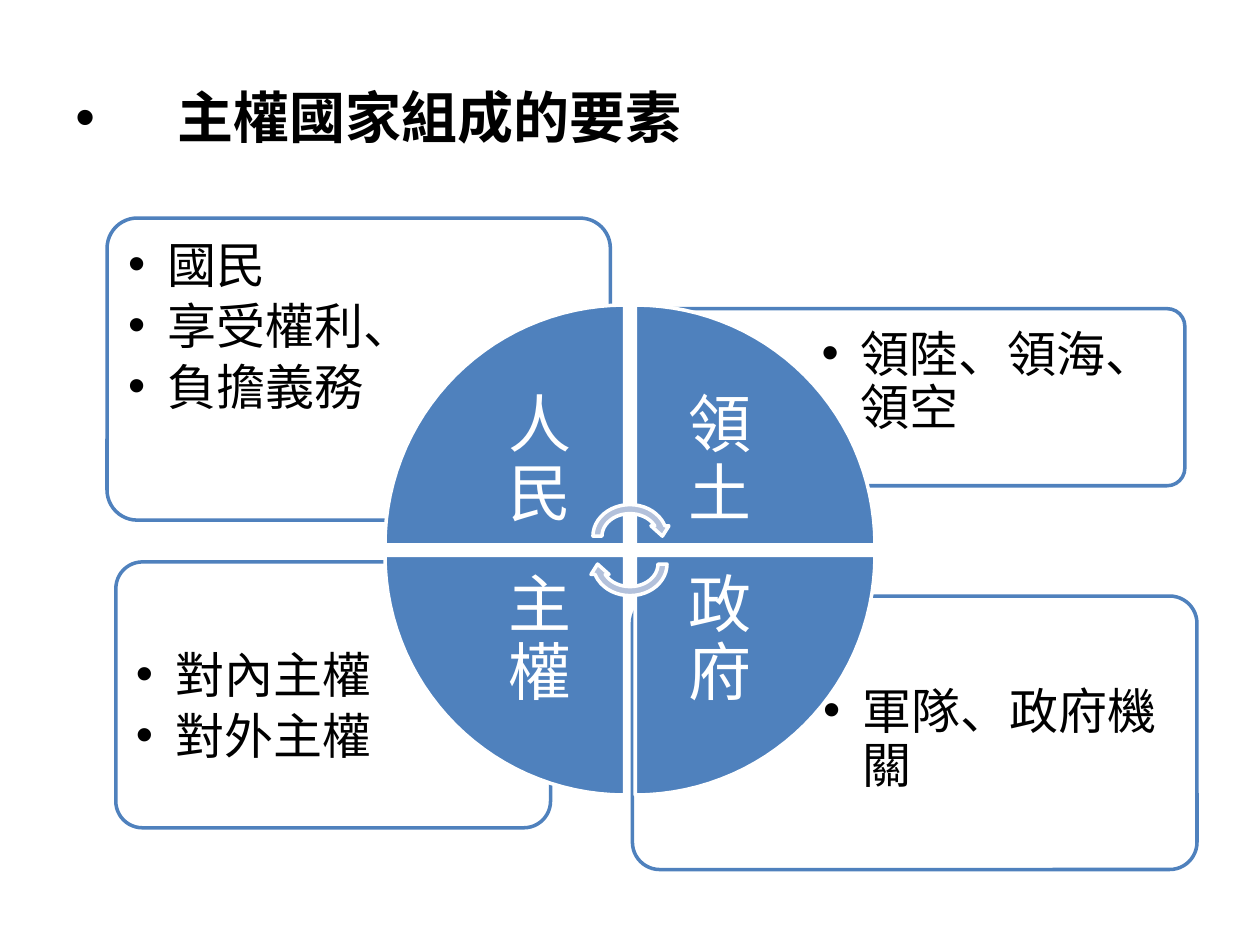
import math
from lxml import etree
from pptx import Presentation
from pptx import util as u
from pptx.dml.color import RGBColor
from pptx.enum import shapes, text
from pptx.oxml.ns import qn

Pt = u.Pt
BLUE = RGBColor(0x4F, 0x81, 0xBD)
PALE = RGBColor(0xB3, 0xC1, 0xDB)
WHITE = RGBColor(0xFF, 0xFF, 0xFF)
BLACK = RGBColor(0, 0, 0)
FONT = "Noto Sans CJK SC"


def paint(sp, fill, line):
    sp.shadow.inherit = False
    sp.fill.solid()
    sp.fill.fore_color.rgb = fill
    sp.line.color.rgb = line
    sp.line.width = Pt(2)


def write(sp, lines, size, color=BLACK, bold=False, ins=(7.2, 3.6, 7.2, 3.6),
          anchor=text.MSO_ANCHOR.TOP, align=text.PP_ALIGN.LEFT,
          indent=0, spacing=None, after=0):
    tf = sp.text_frame
    tf.word_wrap = True
    tf.vertical_anchor = anchor
    tf.margin_left, tf.margin_top, tf.margin_right, tf.margin_bottom = map(Pt, ins)
    for i, line in enumerate(lines):
        p = tf.add_paragraph() if i else tf.paragraphs[0]
        p.alignment = align
        p.space_after = Pt(after)
        if spacing:
            p.line_spacing = Pt(spacing)
        if indent:
            pPr = p._p.get_or_add_pPr()
            pPr.set("marL", str(Pt(indent)))
            pPr.set("indent", str(-Pt(indent)))
            etree.SubElement(pPr, qn("a:buFont")).set("typeface", "Arial")
            etree.SubElement(pPr, qn("a:buChar")).set("char", "•")
        r = p.add_run()
        r.text = line
        r.font.size, r.font.bold, r.font.name = Pt(size), bold, FONT
        r.font.color.rgb = color
        etree.SubElement(r._r.get_or_add_rPr(), qn("a:ea")).set("typeface", FONT)


prs = Presentation()
prs.slide_width, prs.slide_height = Pt(720), Pt(540)
s = prs.slides.add_slide(prs.slide_layouts[6])

# Title
sp = s.shapes.add_textbox(Pt(36), Pt(21.6), Pt(648), Pt(90))
write(sp, ["主權國家組成的要素"], 32, bold=True, indent=58.5,
      anchor=text.MSO_ANCHOR.MIDDLE)

# Detail boxes: left, top, width, height, insets, lines
boxes = [
    (361.4, 340.6, 322.6, 156.3, (109, 51, 11.5, 11.5), ["軍隊、政府機關"]),
    (66.2, 321.1, 248.4, 151.9, (11.5, 50, 86, 11.5), ["對內主權", "對外主權"]),
    (365, 176.4, 312.1, 101.2, (104.5, 11, 11, 36), ["領陸、領海、領空"]),
    (61.2, 124.6, 287.6, 172.6, (12, 12, 98.5, 55.5),
     ["國民", "享受權利、", "負擔義務"]),
]
for x, y, w, h, ins, lines in boxes:
    sp = s.shapes.add_shape(shapes.MSO_SHAPE.ROUNDED_RECTANGLE,
                            Pt(x), Pt(y), Pt(w), Pt(h))
    sp.adjustments[0] = 0.1
    paint(sp, WHITE, BLUE)
    clr = sp._element.spPr.find(qn("a:solidFill"))[0]
    etree.SubElement(clr, qn("a:alpha")).set("val", "90000")
    corner = 0.029 * h  # the rounded corners already inset the text by this
    write(sp, lines, 28, ins=[m - corner for m in ins], indent=22.5,
          spacing=30.8, after=4)

# Quarter circles around a shared centre
CX, CY, RADIUS, HALF_GAP, STEPS = 360, 314.3, 137, 3, 30
OUTER, INNER = 60.5, 20
for dx, dy, label in [(-1, -1, "人民"), (1, -1, "領土"),
                      (1, 1, "政府"), (-1, 1, "主權")]:
    x0, y0 = CX + dx * HALF_GAP, CY + dy * HALF_GAP
    angles = [math.pi / 2 * i / STEPS for i in range(STEPS + 1)]
    arc = [(Pt(x0 + dx * RADIUS * math.cos(a)), Pt(y0 + dy * RADIUS * math.sin(a)))
           for a in angles]
    fb = s.shapes.build_freeform(Pt(x0), Pt(y0))
    fb.add_line_segments(arc, close=True)
    sp = fb.convert_to_shape()
    paint(sp, BLUE, WHITE)
    left, right = (OUTER, INNER) if dx < 0 else (INNER, OUTER)
    top, bottom = (OUTER, INNER) if dy < 0 else (INNER, OUTER)
    write(sp, [label], 36, color=WHITE, ins=(left, top, right, bottom),
          anchor=text.MSO_ANCHOR.MIDDLE, align=text.PP_ALIGN.CENTER, spacing=39)

# Cycle arrows
for y, rotation in [(285.8, 0), (301.7, 180)]:
    sp = s.shapes.add_shape(shapes.MSO_SHAPE.CIRCULAR_ARROW,
                            Pt(336.3), Pt(y), Pt(47.4), Pt(41.2))
    sp.rotation = rotation
    paint(sp, PALE, WHITE)

prs.save("out.pptx")
